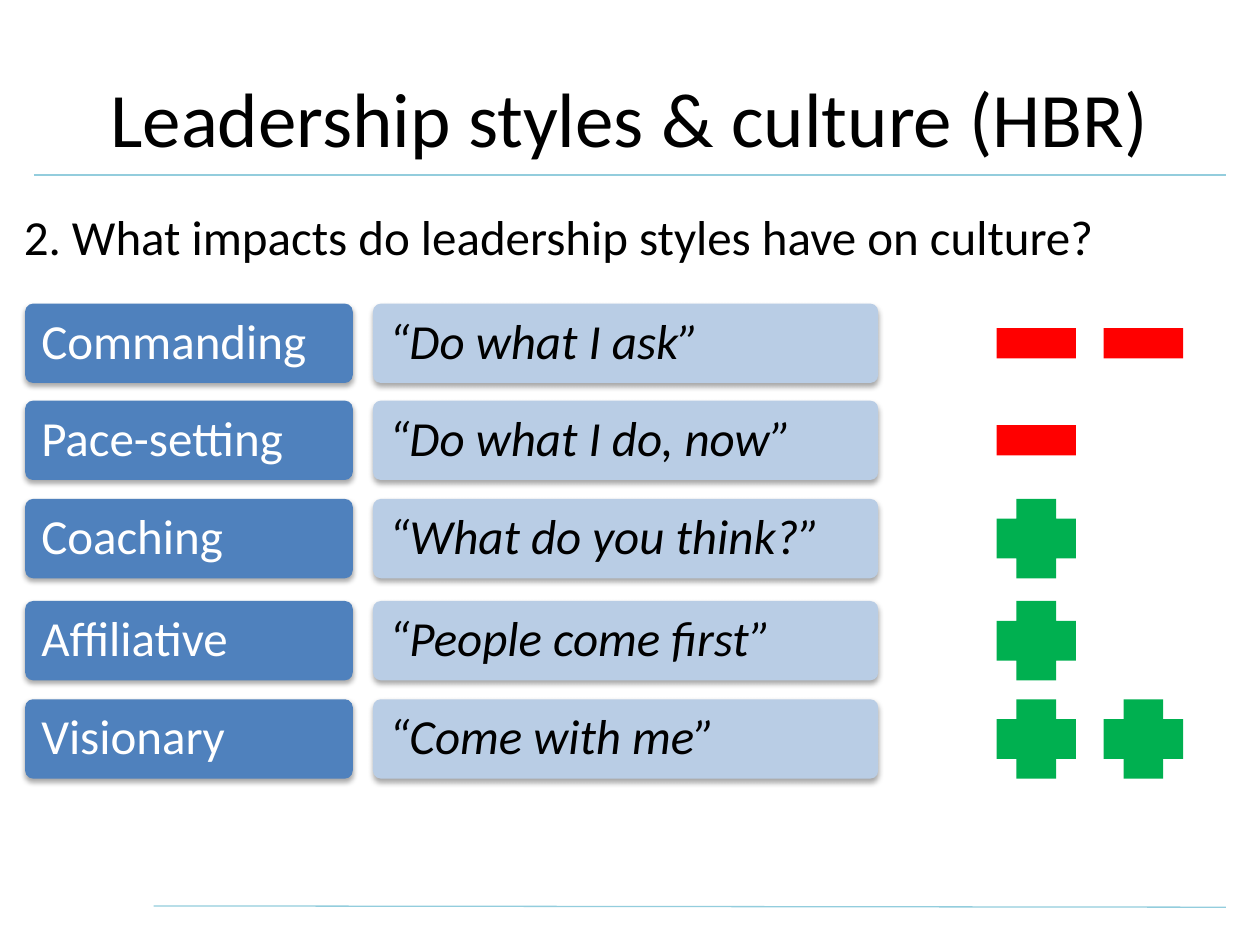
from lxml import etree
from pptx import Presentation
from pptx.dml.color import RGBColor
from pptx.enum.shapes import MSO_CONNECTOR, MSO_SHAPE
from pptx.enum.text import MSO_ANCHOR, PP_ALIGN
from pptx.oxml import parse_xml
from pptx.oxml.ns import nsdecls, qn
from pptx.util import Inches, Pt

ROUNDED, RECTANGLE, CROSS = MSO_SHAPE.ROUNDED_RECTANGLE, MSO_SHAPE.RECTANGLE, MSO_SHAPE.CROSS
STRAIGHT = MSO_CONNECTOR.STRAIGHT
TOP, MIDDLE = MSO_ANCHOR.TOP, MSO_ANCHOR.MIDDLE
LEFT, CENTER = PP_ALIGN.LEFT, PP_ALIGN.CENTER

COLORS = {
    "black": "000000", "white": "FFFFFF", "rule": "93CDDD",
    "style": "4F81BD", "quote": "B9CDE5", "plus": "00B050", "minus": "FF0000",
}
FONT = "Calibri"
COLUMNS, ROWS = 100, 75  # square grid cells over the slide

# Grid row, leadership style, its motto, kind of impact, number of marks
STYLES = [
    (24.1, "Commanding", "“Do what I ask”", "minus", 2),
    (31.8, "Pace-setting", "“Do what I do, now”", "minus", 1),
    (39.6, "Coaching", "“What do you think?”", "plus", 1),
    (47.7, "Affiliative", "“People come first”", "plus", 1),
    (55.5, "Visionary", "“Come with me”", "plus", 2),
]
BAR_HEIGHT = 6.3
MARK_LEFT, MARK_STEP, MARK_SIZE, MINUS_HEIGHT = 79.1, 8.5, 6.3, 2.4


class SlideBuilder:
    def __init__(self, deck):
        self.page = deck.slides.add_slide(deck.slide_layouts[6])
        self.cell_width = deck.slide_width / COLUMNS
        self.cell_height = deck.slide_height / ROWS

    def place(self, left, top, width, height):
        return (round(left * self.cell_width), round(top * self.cell_height),
                round(width * self.cell_width), round(height * self.cell_height))

    def rule(self, left, top, right, bottom):
        line = self.page.shapes.add_connector(STRAIGHT, *self.place(left, top, right, bottom))
        line.line.color.rgb = RGBColor.from_string(COLORS["rule"])
        line.line.width = Pt(0.75)
        etree.SubElement(line.element.spPr, qn("a:effectLst"))

    def set_text(self, shape, text, size, color, align=LEFT, anchor=TOP, italic=False):
        frame = shape.text_frame
        frame.word_wrap = True
        frame.vertical_anchor = anchor
        frame.text = text
        para = frame.paragraphs[0]
        para.alignment = align
        font = para.runs[0].font
        font.name, font.size, font.italic = FONT, Pt(size), italic
        font.color.rgb = RGBColor.from_string(COLORS[color])

    def text(self, area, text, size, **style):
        box = self.page.shapes.add_textbox(*self.place(*area))
        self.set_text(box, text, size, "black", **style)

    def shape(self, kind, area, color):
        shape = self.page.shapes.add_shape(kind, *self.place(*area))
        shape.fill.solid()
        shape.fill.fore_color.rgb = RGBColor.from_string(COLORS[color])
        shape.line.fill.background()
        shape.shadow.inherit = False
        return shape

    def bar(self, area, text, color, text_color, italic=False):
        bar = self.shape(ROUNDED, area, color)
        bar.adjustments[0] = 0.1
        bar.element.spPr.find(qn("a:effectLst")).append(parse_xml(
            f'<a:outerShdw {nsdecls("a")} blurRad="40000" dist="23000" dir="5400000" rotWithShape="0">'
            f'<a:srgbClr val="{COLORS["black"]}"><a:alpha val="35000"/></a:srgbClr></a:outerShdw>'))
        self.set_text(bar, text, 28, text_color, anchor=MIDDLE, italic=italic)
        frame = bar.text_frame
        frame.margin_left = frame.margin_right = Inches(0.11)
        frame.margin_top = frame.margin_bottom = Inches(0.11)
        frame.paragraphs[0].line_spacing = 0.9

    def marks(self, top, impact, count):
        kind, height = (CROSS, MARK_SIZE) if impact == "plus" else (RECTANGLE, MINUS_HEIGHT)
        for index in range(count):
            area = (MARK_LEFT + index * MARK_STEP, top + (BAR_HEIGHT - height) / 2, MARK_SIZE, height)
            self.shape(kind, area, impact)


def main():
    deck = Presentation()
    deck.slide_width, deck.slide_height = Inches(10), Inches(7.5)
    slide = SlideBuilder(deck)

    # Rules, title and question
    slide.rule(12.2, 71.9, 97.3, 72)
    slide.rule(2.7, 13.9, 97.3, 13.9)
    slide.text((5, 3, 90, 12.5), "Leadership styles & culture (HBR)", 44, align=CENTER, anchor=MIDDLE)
    slide.text((0.9, 15.9, 87.9, 5.7), "2. What impacts do leadership styles have on culture?", 28)

    # One row for each leadership style
    for top, name, motto, impact, count in STYLES:
        slide.bar((2, top, 26, BAR_HEIGHT), name, "style", "white")
        slide.bar((29.6, top, 40.1, BAR_HEIGHT), motto, "quote", "black", italic=True)
        slide.marks(top, impact, count)

    deck.save("out.pptx")


if __name__ == "__main__":
    main()
